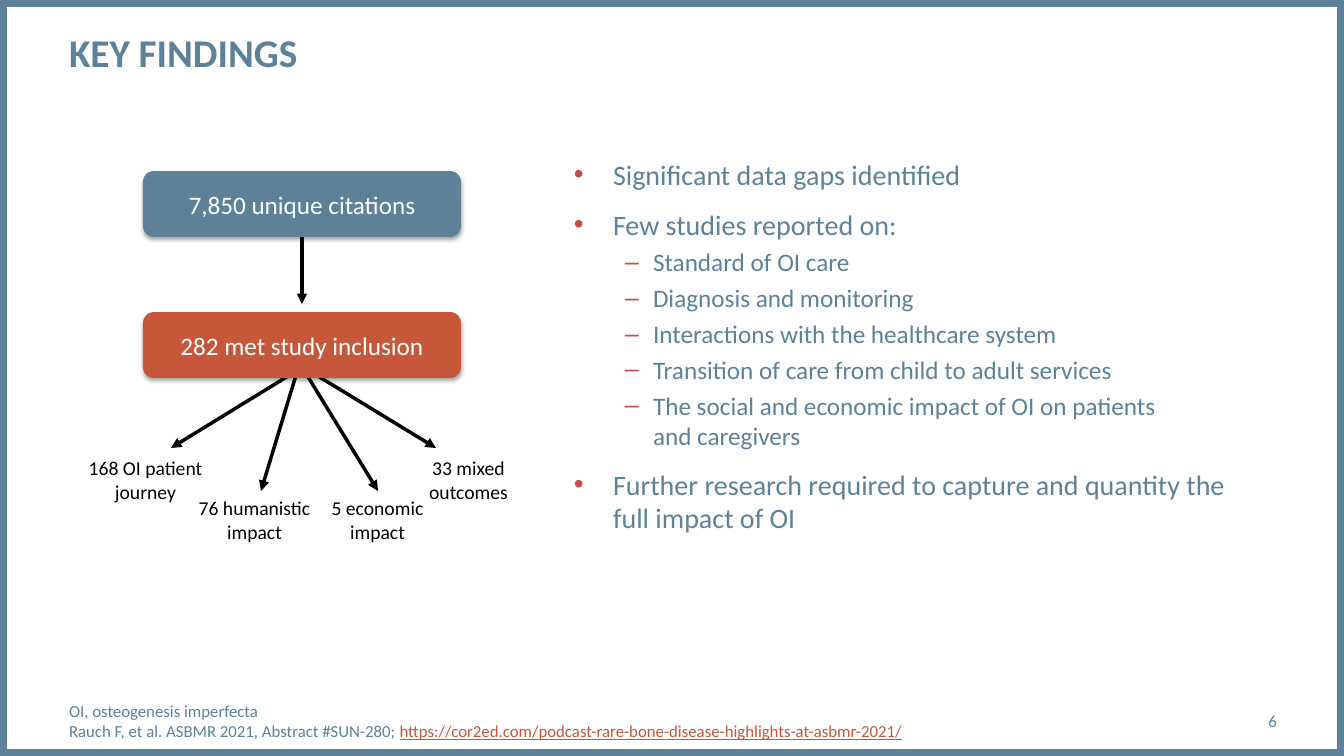
import lxml.etree
import pptx
import pptx.dml.color
import pptx.enum.shapes
import pptx.enum.text
import pptx.oxml.ns
import pptx.util

PX = 914400 / 100.8
COLORS = {"slate": "5D8298", "rust": "C6573B", "bullet": "C0504D", "black": "000000", "white": "FFFFFF"}
ALIGN = pptx.enum.text.PP_ALIGN
ANCHOR = pptx.enum.text.MSO_ANCHOR
SHAPE = pptx.enum.shapes.MSO_SHAPE
qn = pptx.oxml.ns.qn


def px(*values):
    return [pptx.util.Emu(round(value * PX)) for value in values]


def format_text(shape, size, color, align=ALIGN.LEFT, anchor=ANCHOR.TOP, inset=True):
    frame = shape.text_frame
    frame.word_wrap = True
    frame.auto_size = pptx.enum.text.MSO_AUTO_SIZE.NONE
    frame.vertical_anchor = anchor
    if not inset:
        frame.margin_left = frame.margin_top = frame.margin_right = frame.margin_bottom = 0
    for paragraph in frame.paragraphs:
        paragraph.alignment = align
        for run in paragraph.runs:
            run.font.name = "Calibri"
            run.font.size = pptx.util.Pt(size)
            run.font.color.rgb = pptx.dml.color.RGBColor.from_string(COLORS[color])


presentation = pptx.Presentation()
presentation.slide_width, presentation.slide_height = px(1344, 756)
slide = presentation.slides.add_slide(presentation.slide_layouts[1])
shapes = slide.shapes

border = shapes.add_shape(SHAPE.RECTANGLE, *px(0, 0, 1344, 756))
border.shadow.inherit = False
border.fill.background()
border.line.color.rgb = pptx.dml.color.RGBColor.from_string(COLORS["slate"])
border.line.width = pptx.util.Pt(10)

title = shapes.title
title.left, title.top, title.width, title.height = px(69, 28, 964, 95)
title.text_frame.text = "KEY FINDINGS"
format_text(title, 28, "slate", inset=False)
title.text_frame.paragraphs[0].runs[0].font.bold = True

findings = [
    (0, "Significant data gaps identified"),
    (0, "Few studies reported on:"),
    (1, "Standard of OI care"),
    (1, "Diagnosis and monitoring"),
    (1, "Interactions with the healthcare system"),
    (1, "Transition of care from child to adult services"),
    (1, "The social and economic impact of OI on patients\nand caregivers"),
    (0, "Further research required to capture and quantity the\nfull impact of OI"),
]
level_styles = [("•", 39, 39, 12, 20), ("–", 79, 28, 4, 18)]
body = slide.placeholders[1]
body.left, body.top, body.width, body.height = px(574, 157, 704, 499)
for index, (level, text) in enumerate(findings):
    paragraph = body.text_frame.paragraphs[0] if index == 0 else body.text_frame.add_paragraph()
    paragraph.text = text
    paragraph.level = level
format_text(body, 20, "slate", inset=False)
for index, paragraph in enumerate(body.text_frame.paragraphs):
    character, margin, hanging, space, size = level_styles[paragraph.level]
    properties = paragraph._p.get_or_add_pPr()
    properties.set("marL", str(px(margin)[0]))
    properties.set("indent", str(-px(hanging)[0]))
    bullet_color = lxml.etree.SubElement(properties, qn("a:buClr"))
    lxml.etree.SubElement(bullet_color, qn("a:srgbClr"), val=COLORS["bullet"])
    lxml.etree.SubElement(properties, qn("a:buFont"), typeface="Arial")
    lxml.etree.SubElement(properties, qn("a:buChar"), char=character)
    paragraph.space_before = pptx.util.Pt(space if index else 0)
    for run in paragraph.runs:
        run.font.size = pptx.util.Pt(size)

page_number = shapes.add_textbox(*px(1159, 701, 118, 40))
page_number.text_frame.text = "6"
format_text(page_number, 12, "slate", ALIGN.RIGHT, ANCHOR.MIDDLE, inset=False)

footnote = shapes.add_textbox(*px(69, 701, 895, 40))
footnote.text_frame.text = "OI, osteogenesis imperfecta\nRauch F, et al. ASBMR 2021, Abstract #SUN-280; "
address = footnote.text_frame.paragraphs[1].add_run()
address.text = "https://cor2ed.com/podcast-rare-bone-disease-highlights-at-asbmr-2021/"
format_text(footnote, 12, "slate", anchor=ANCHOR.MIDDLE, inset=False)
address.font.color.rgb = pptx.dml.color.RGBColor.from_string(COLORS["rust"])
address.font.underline = True

outcomes = [
    ("168 OI patient journey", 74, 451, (298, 370, 171, 448)),
    ("76 humanistic impact", 183, 491, (297, 372, 261, 491)),
    ("5 economic impact", 306, 491, (305, 372, 378, 491)),
    ("33 mixed outcomes", 397, 451, (308, 370, 436, 448)),
]
arrows = []
for text, left, top, ends in outcomes:
    label = shapes.add_textbox(*px(left, top, 143, 57))
    label.text_frame.text = text
    format_text(label, 14, "black", ALIGN.CENTER)
    arrows.append(shapes.add_connector(pptx.enum.shapes.MSO_CONNECTOR.STRAIGHT, *px(*ends)))

boxes = []
for text, top, color in [("7,850 unique citations", 171, "slate"), ("282 met study inclusion", 312, "rust")]:
    box = shapes.add_shape(SHAPE.ROUNDED_RECTANGLE, *px(143, top, 318, 66))
    box.fill.solid()
    box.fill.fore_color.rgb = pptx.dml.color.RGBColor.from_string(COLORS[color])
    box.line.fill.background()
    box.shadow.inherit = False
    effects = box._element.spPr.find(qn("a:effectLst"))
    shadow = lxml.etree.SubElement(
        effects, qn("a:outerShdw"), blurRad="39370", dist="22860", dir="5400000", rotWithShape="0")
    shadow_color = lxml.etree.SubElement(shadow, qn("a:srgbClr"), val=COLORS["black"])
    lxml.etree.SubElement(shadow_color, qn("a:alpha"), val="35000")
    box.text_frame.text = text
    format_text(box, 18, "white", ALIGN.CENTER, ANCHOR.MIDDLE)
    boxes.append(box)

screening = shapes.add_connector(pptx.enum.shapes.MSO_CONNECTOR.STRAIGHT, *px(302, 237, 302, 304))
screening.begin_connect(boxes[0], 2)
arrows.append(screening)

for arrow in arrows:
    arrow.line.color.rgb = pptx.dml.color.RGBColor.from_string(COLORS["black"])
    arrow.line.width = pptx.util.Pt(2.5)
    lxml.etree.SubElement(arrow.line._get_or_add_ln(), qn("a:tailEnd"), type="triangle")
    lxml.etree.SubElement(arrow._element.spPr, qn("a:effectLst"))

presentation.save("out.pptx")
